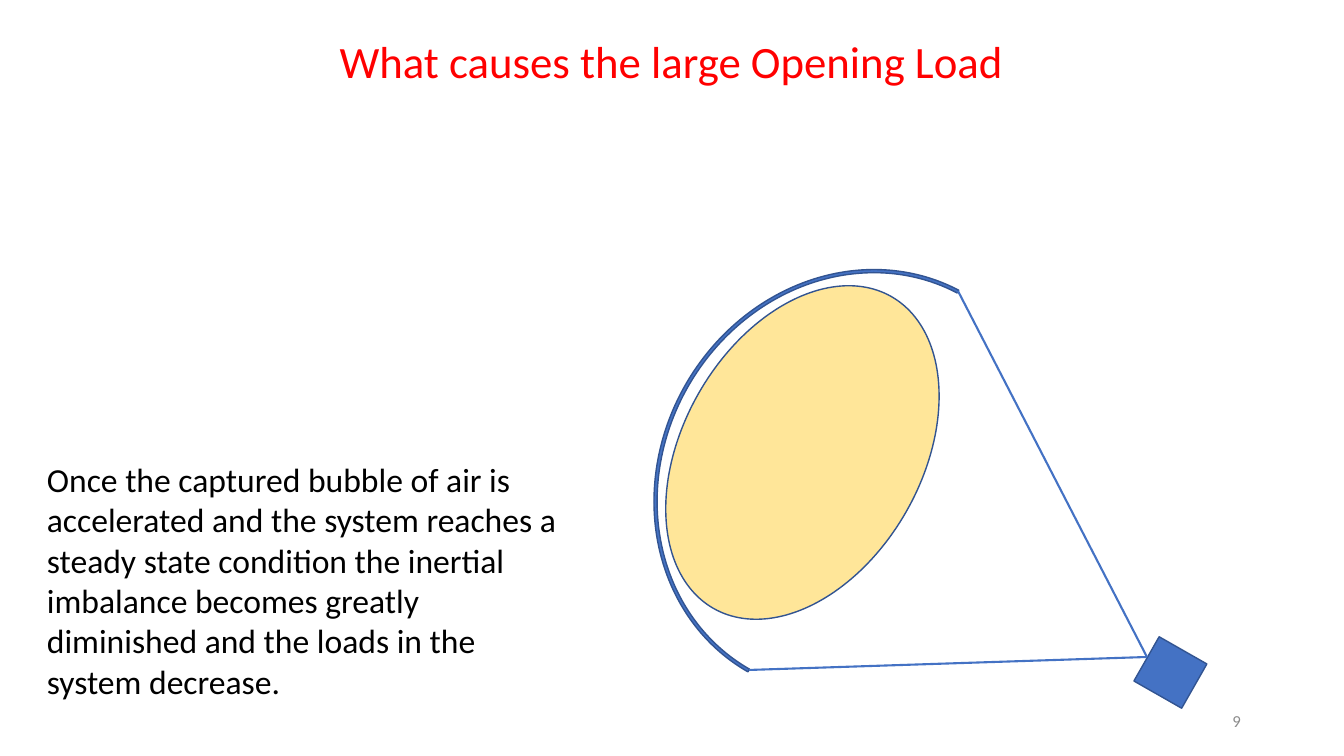
from pptx import Presentation
from pptx import util as u
from pptx.dml.color import RGBColor
from pptx.enum import shapes, text
from pptx.oxml.ns import qn
from lxml import etree

PX = 12192000 / 1344
TILT = 299.7
BLUE, OUTLINE, AIR = "4472C4", "325491", "FFE699"
PRESET = shapes.MSO_SHAPE


def px(*lengths):
    return [u.Emu(round(length * PX)) for length in lengths]


def rgb(value):
    return RGBColor.from_string(value)


deck = Presentation()
deck.slide_width, deck.slide_height = px(1344, 756)
page = deck.slides.add_slide(deck.slide_layouts[6])

# Parachute parts: canopy, payload and captured air, all tilted alike
parts = []
for preset, place, fill in [
    (PRESET.BLOCK_ARC, (638, 286, 436, 393), BLUE),
    (PRESET.RECTANGLE, (1145, 645, 51, 55), BLUE),
    (PRESET.OVAL, (623, 333, 359, 239), AIR),
]:
    part = page.shapes.add_shape(preset, *px(*place))
    part.rotation = TILT
    part.shadow.inherit = False
    part.fill.solid()
    part.fill.fore_color.rgb = rgb(fill)
    part.line.color.rgb = rgb(OUTLINE)
    part.line.width = u.Pt(1)
    parts.append(part)
canopy, payload, air = parts

# Thin arc: start angle, end angle, thickness
for index, value in enumerate((108, 215.044, 0.008)):
    canopy.adjustments[index] = value

# Suspension lines from the canopy edges to the payload
for start in [(749, 670), (958, 291)]:
    cord = page.shapes.add_connector(
        shapes.MSO_CONNECTOR.STRAIGHT, *px(*start, 1147, 657))
    cord.end_connect(payload, 0)
    # The payload is tilted, so its top side's middle lies here
    cord.end_x, cord.end_y = px(1147, 657)
    cord.line.color.rgb = rgb(BLUE)
    cord.line.width = u.Pt(1.5)
    etree.SubElement(cord._element.spPr, qn("a:effectLst"))

# Page number, explanation and title
ALIGN, ANCHOR = text.PP_ALIGN, text.MSO_ANCHOR
FIT, FIXED = text.MSO_AUTO_SIZE.SHAPE_TO_FIT_TEXT, text.MSO_AUTO_SIZE.NONE
for words, place, size, color, align, anchor, sizing in [
    ("9", (949, 701, 302, 40), 12, "8C8C8C", ALIGN.RIGHT, ANCHOR.MIDDLE, FIXED),
    ("Once the captured bubble of air is accelerated and the system reaches "
     "a steady state condition the inertial imbalance becomes greatly "
     "diminished and the loads in the system decrease.",
     (37, 454, 540, 254), 24, "000000", ALIGN.LEFT, ANCHOR.TOP, FIT),
    ("What causes the large Opening Load",
     (318, 29, 707, 65), 32, "FF0000", ALIGN.CENTER, ANCHOR.TOP, FIT),
]:
    box = page.shapes.add_textbox(*px(*place))
    frame = box.text_frame
    frame.word_wrap = True
    frame.auto_size = sizing
    frame.vertical_anchor = anchor
    para = frame.paragraphs[0]
    para.alignment = align
    span = para.add_run()
    span.text = words
    span.font.name = "Calibri"
    span.font.size = u.Pt(size)
    span.font.color.rgb = rgb(color)

deck.save("out.pptx")
